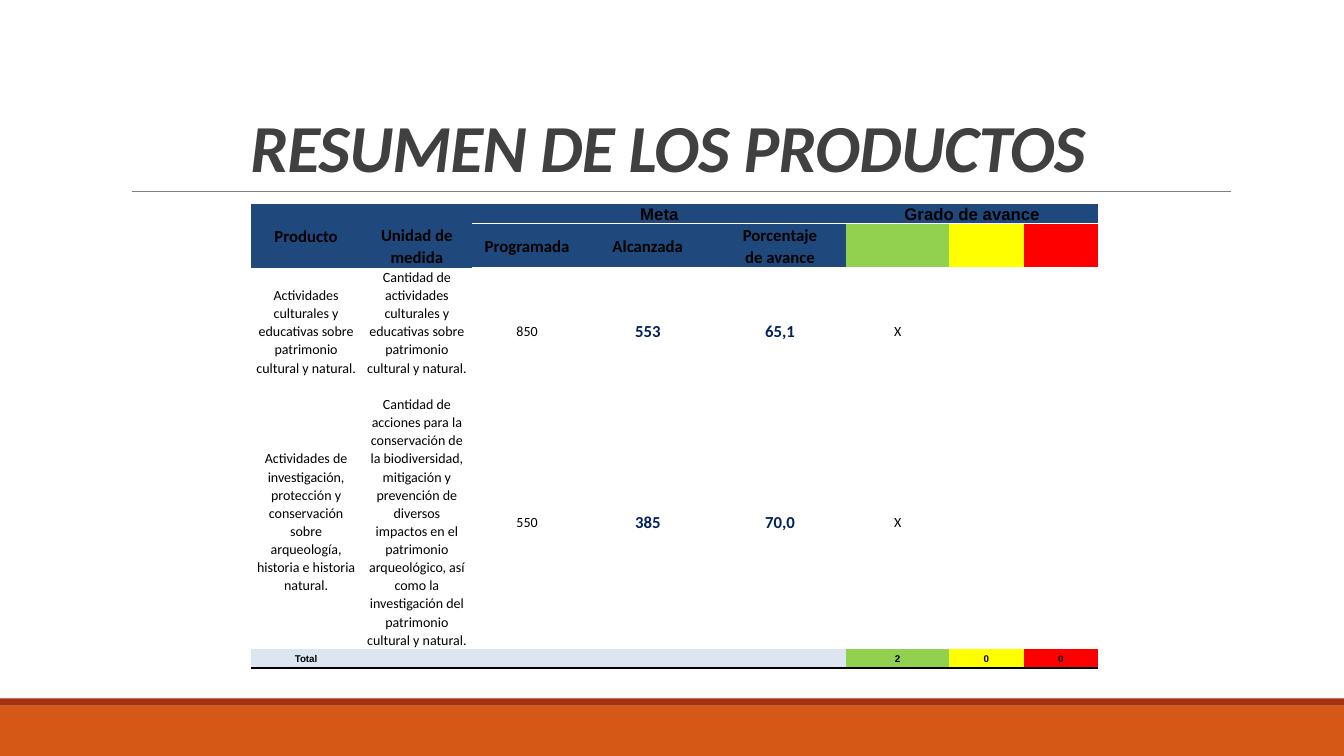
"""Build the product summary slide with its progress table."""
from lxml.etree import SubElement
from pptx import Presentation
from pptx.dml.color import RGBColor as RGB
from pptx.enum.shapes import MSO_CONNECTOR as LINK, MSO_SHAPE as SHAPE
from pptx.enum.text import MSO_ANCHOR as ANCHOR, PP_ALIGN as ALIGN
from pptx.oxml import parse_xml
from pptx.oxml.ns import nsdecls, qn
from pptx.util import Pt

PX = 9525
THEME = {
    "orange": "D55816", "rust": "A5300F", "gray": "808080", "title": "404040",
    "navy": "1F497D", "pale": "DCE6F1", "green": "92D050", "yellow": "FFFF00",
    "red": "FF0000", "black": "000000", "white": "FFFFFF", "value": "002060",
    "body": "Calibri", "label": "Arial",
    "title_pt": 48, "head_pt": 12, "text_pt": 10, "total_pt": 7,
}


def write(para, text, face, size, color, bold):
    para.alignment = ALIGN.CENTER
    for i, line in enumerate(text.split("\n")):
        if i:
            para.add_line_break()
        run = para.add_run()
        run.text = line
        font = run.font
        font.name, font.size, font.bold = THEME[face], Pt(THEME[size]), bold
        font.color.rgb = RGB.from_string(THEME[color])
    return run


def rule(cell, side, color):
    cell._tc.get_or_add_tcPr().insert(0, parse_xml(
        f'<a:{side} {nsdecls("a")} w="12700"><a:solidFill>'
        f'<a:srgbClr val="{THEME[color]}"/></a:solidFill></a:{side}>'))


deck = Presentation()
deck.slide_width, deck.slide_height = 1280 * PX, 720 * PX
slide = deck.slides.add_slide(deck.slide_layouts[5])
shapes = slide.shapes

for top, high, color in [(672, 48, "orange"), (665, 7, "rust")]:
    band = shapes.add_shape(SHAPE.RECTANGLE, 0, top * PX, 1280 * PX, high * PX)
    band.shadow.inherit = False
    band.fill.solid()
    band.fill.fore_color.rgb = RGB.from_string(THEME[color])
    band.line.fill.background()

line = shapes.add_connector(LINK.STRAIGHT, 126 * PX, 182 * PX, 1172 * PX, 182 * PX)
line.line.color.rgb = RGB.from_string(THEME["gray"])
line.line.width = Pt(0.5)
SubElement(line._element.spPr, qn("a:effectLst"))

title = shapes.title
title.left, title.top, title.width, title.height = (n * PX for n in (115, 30, 1056, 152))
title.text_frame.vertical_anchor = ANCHOR.BOTTOM
para = title.text_frame.paragraphs[0]
para.line_spacing = 0.85
run = write(para, "RESUMEN DE LOS PRODUCTOS ", "body", "title_pt", "title", True)
run.font.italic = True
run._r.get_or_add_rPr().set("spc", "-50")

rows = [
    ["Producto", "", "Meta", "", "", "Grado de avance", "", ""],
    ["", "Unidad de medida", "Programada", "Alcanzada", "Porcentaje\nde avance", "", "", ""],
    ["Actividades culturales y educativas sobre patrimonio cultural y natural.",
     "Cantidad de actividades culturales y educativas sobre patrimonio cultural y natural.",
     "850", "553", "65,1", "X", "", ""],
    ["Actividades de investigación, protección y conservación sobre arqueología, "
     "historia e historia natural.",
     "Cantidad de acciones para la conservación de la biodiversidad, mitigación y "
     "prevención de diversos impactos en el patrimonio arqueológico, así como la "
     "investigación del patrimonio cultural y natural.",
     "550", "385", "70,0", "X", "", ""],
    ["Total", "", "", "", "", "2", "0", "0"],
]
wide = [105, 106, 104, 126, 126, 98, 71, 71]
tall = [19, 42, 121, 242, 18]
light = ["green", "yellow", "red"]
fills = [["navy"] * 8, ["navy"] * 5 + light, [None] * 8, [None] * 8, ["pale"] * 5 + light]

frame = shapes.add_table(5, 8, 239 * PX, 194 * PX, sum(wide) * PX, sum(tall) * PX)
table = frame.table
table.first_row = table.horz_banding = False
table._tbl.tblPr.find(qn("a:tableStyleId")).text = "{2D5ABB26-0587-4C30-8999-92F81FD0307C}"
for col, size in zip(table.columns, wide):
    col.width = size * PX
for row, size in zip(table.rows, tall):
    row.height = size * PX

for r, row in enumerate(rows):
    for c, text in enumerate(row):
        cell = table.cell(r, c)
        cell.margin_left = cell.margin_right = 5 * PX
        cell.margin_top = cell.margin_bottom = 0
        cell.vertical_anchor = ANCHOR.TOP if (r, c) == (2, 1) else ANCHOR.MIDDLE
        if fills[r][c]:
            cell.fill.solid()
            cell.fill.fore_color.rgb = RGB.from_string(THEME[fills[r][c]])
        else:
            cell.fill.background()
        if r == 4:
            rule(cell, "lnB", "black")
        elif r < 2 and c > 1:
            rule(cell, ("lnB", "lnT")[r], "white")
        para = cell.text_frame.paragraphs[0]
        para.line_spacing = 1.07
        value = r in (2, 3) and c in (3, 4)
        face = "label" if r == 4 or (r == 0 and c > 1) else "body"
        size = "total_pt" if r == 4 else "head_pt" if r < 2 or value else "text_pt"
        if text:
            write(para, text, face, size, "value" if value else "black", value or r in (0, 1, 4))
        else:
            SubElement(para._p, qn("a:endParaRPr")).set("sz", str(THEME["total_pt"] * 100))

for start, end in [((0, 0), (1, 0)), ((0, 2), (0, 4)), ((0, 5), (0, 7))]:
    table.cell(*start).merge(table.cell(*end))

deck.save("out.pptx")
